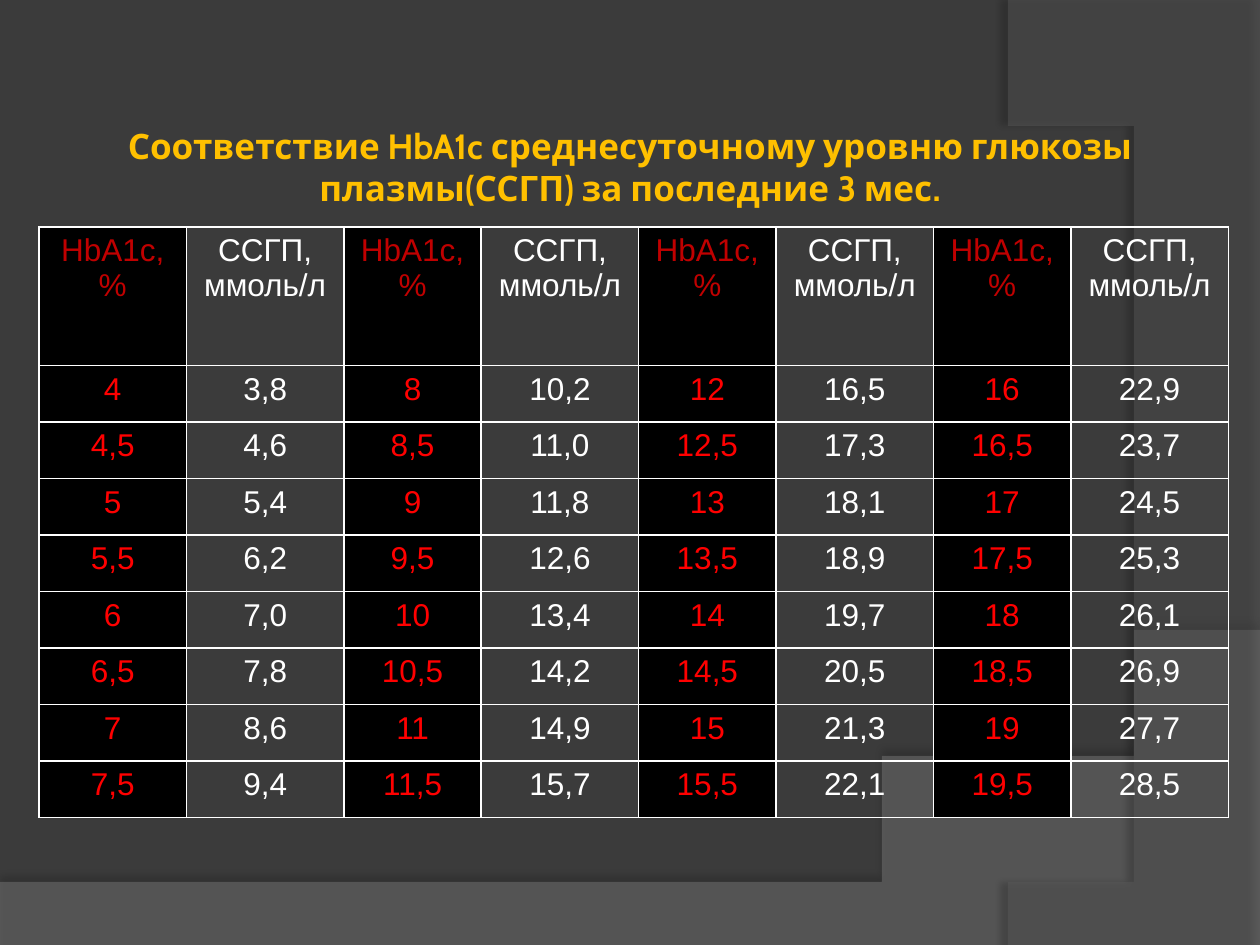
from lxml.etree import SubElement as Sub
from pptx import Presentation
from pptx.dml.color import RGBColor as Rgb
from pptx.enum.text import MSO_ANCHOR as Anchor, PP_ALIGN as Align
from pptx.oxml.ns import qn
from pptx.util import Inches, Pt

WIDTH, HEIGHT = 10, 7.5


class Theme:
    background = "3B3B3B"
    wave, arc = "7F7F7F", "5E5E5E"
    shadow = "000000"
    border, border_width = "FFFFFF", 1
    index_fill = "000000"
    title = {"name": "Cabin", "size": Pt(20), "bold": True}
    title_color = "FFC000"
    table = {"name": "Arial", "size": Pt(18), "bold": False}
    header_color, index_color, glucose_color = "C00000", "FF0000", "FFFFFF"


TITLE = "Соответствие HbA1c среднесуточному уровню глюкозы плазмы(ССГП) за последние 3 мес."
INDEX_HEADER, GLUCOSE_HEADER = "HbA1c,\n%", "ССГП, ммоль/л"
FIRST_INDEX, INDEX_STEP = 4, 0.5
# Mean glucose, one list per pair of columns
GLUCOSE = [
    [3.8, 4.6, 5.4, 6.2, 7.0, 7.8, 8.6, 9.4],
    [10.2, 11.0, 11.8, 12.6, 13.4, 14.2, 14.9, 15.7],
    [16.5, 17.3, 18.1, 18.9, 19.7, 20.5, 21.3, 22.1],
    [22.9, 23.7, 24.5, 25.3, 26.1, 26.9, 27.7, 28.5],
]
TABLE_LEFT, TABLE_TOP, TABLE_HEIGHT = 0.31, 1.8, 4.69
HEADER_HEIGHT = 1.1
FIRST_WIDTH, INDEX_WIDTH, GLUCOSE_WIDTH = 1.17, 1.09, 1.25


def apply(target, values):
    for name, value in values.items():
        setattr(target, name, value)


def bezier(start, control_1, control_2, end, steps=48):
    """Points on a cubic curve, start included."""
    points = []
    for step in range(steps + 1):
        t = step / steps
        weights = ((1 - t) ** 3, 3 * t * (1 - t) ** 2, 3 * t * t * (1 - t), t ** 3)
        corners = zip(start, control_1, control_2, end)
        points.append(tuple(sum(w * v for w, v in zip(weights, axis)) for axis in corners))
    return points


def add_backdrop(slide, points, color, opacity, shadow):
    """Translucent outline with a soft outer shadow."""
    builder = slide.shapes.build_freeform(*points[0], scale=Inches(1))
    builder.add_line_segments(points[1:], close=True)
    backdrop = builder.convert_to_shape()
    backdrop.line.fill.background()
    backdrop.fill.solid()
    backdrop.fill.fore_color.rgb = Rgb.from_string(color)
    backdrop.shadow.inherit = False
    properties = backdrop.fill._xPr
    tint = properties.find(qn("a:solidFill"))[0]
    Sub(tint, qn("a:alpha"), val=str(opacity * 1000))

    shadow_opacity, blur, distance, angle = shadow
    outer = Sub(properties.find(qn("a:effectLst")), qn("a:outerShdw"),
                blurRad=str(Pt(blur)), dist=str(Pt(distance)),
                dir=str(angle * 60000), rotWithShape="0")
    shade = Sub(outer, qn("a:srgbClr"), val=Theme.shadow)
    Sub(shade, qn("a:alpha"), val=str(shadow_opacity * 1000))


def write(frame, text, font, color):
    frame.text = text
    for paragraph in frame.paragraphs:
        paragraph.alignment = Align.CENTER
        for run in paragraph.runs:
            apply(run.font, font)
            run.font.color.rgb = Rgb.from_string(color)


def add_title(slide):
    margin = 0.05
    title = slide.shapes.add_textbox(
        Inches(WIDTH * margin), Inches(HEIGHT * 0.04),
        Inches(WIDTH * (1 - 2 * margin)), Inches(HEIGHT * 0.272))
    inset = Inches(0.05)
    apply(title.text_frame, {
        "word_wrap": True, "vertical_anchor": Anchor.MIDDLE,
        "margin_left": inset, "margin_right": inset,
        "margin_top": inset, "margin_bottom": inset})
    write(title.text_frame, TITLE, Theme.title, Theme.title_color)


def add_borders(cell):
    properties = cell._tc.get_or_add_tcPr()
    for side in ("lnL", "lnR", "lnT", "lnB"):
        edge = Sub(properties, qn(f"a:{side}"), w=str(Pt(Theme.border_width)))
        Sub(Sub(edge, qn("a:solidFill")), qn("a:srgbClr"), val=Theme.border)


def fill_cell(cell, text, color, is_index):
    add_borders(cell)
    if is_index:
        cell.fill.solid()
        cell.fill.fore_color.rgb = Rgb.from_string(Theme.index_fill)
    else:
        cell.fill.background()
    write(cell.text_frame, text, Theme.table, color)


def decimal_comma(value, pattern):
    return format(value, pattern).replace(".", ",")


def add_glucose_table(slide):
    pairs, count = len(GLUCOSE), len(GLUCOSE[0])
    widths = [INDEX_WIDTH, GLUCOSE_WIDTH] * pairs
    widths[0] = FIRST_WIDTH
    heights = [HEADER_HEIGHT] + [(TABLE_HEIGHT - HEADER_HEIGHT) / count] * count
    table = slide.shapes.add_table(
        len(heights), len(widths), Inches(TABLE_LEFT), Inches(TABLE_TOP),
        Inches(sum(widths)), Inches(TABLE_HEIGHT)).table
    apply(table, {"first_row": False, "horz_banding": False})
    for column, width in zip(table.columns, widths):
        column.width = Inches(width)
    for row, height in zip(table.rows, heights):
        row.height = Inches(height)

    for pair, levels in enumerate(GLUCOSE):
        left, right = 2 * pair, 2 * pair + 1
        fill_cell(table.cell(0, left), INDEX_HEADER, Theme.header_color, True)
        fill_cell(table.cell(0, right), GLUCOSE_HEADER, Theme.glucose_color, False)
        for row, level in enumerate(levels, 1):
            index = FIRST_INDEX + INDEX_STEP * (pair * count + row - 1)
            fill_cell(table.cell(row, left), decimal_comma(index, "g"),
                      Theme.index_color, True)
            fill_cell(table.cell(row, right), decimal_comma(level, ".1f"),
                      Theme.glucose_color, False)


def main():
    deck = Presentation()
    apply(deck, {"slide_width": Inches(WIDTH), "slide_height": Inches(HEIGHT)})
    slide = deck.slides.add_slide(deck.slide_layouts[6])
    slide.background.fill.solid()
    slide.background.fill.fore_color.rgb = Rgb.from_string(Theme.background)

    # Backdrop: wave along the bottom, arc along the right side
    wave = [(0, HEIGHT), (WIDTH, HEIGHT)] + bezier(
        (WIDTH, 5.2), (5.59, 7.29), (3.91, 7.19), (0, 7.05))
    add_backdrop(slide, wave, Theme.wave, 45, (35, 4, 3.5, 270))
    arc = [(WIDTH, 0.02), (WIDTH, HEIGHT)] + bezier(
        (8.21, HEIGHT), (9.35, 6.19), (10.18, 3), (8, 0))
    add_backdrop(slide, arc, Theme.arc, 40, (45, 4, 4, 180))

    # Content
    add_title(slide)
    add_glucose_table(slide)
    deck.save("out.pptx")


if __name__ == "__main__":
    main()
